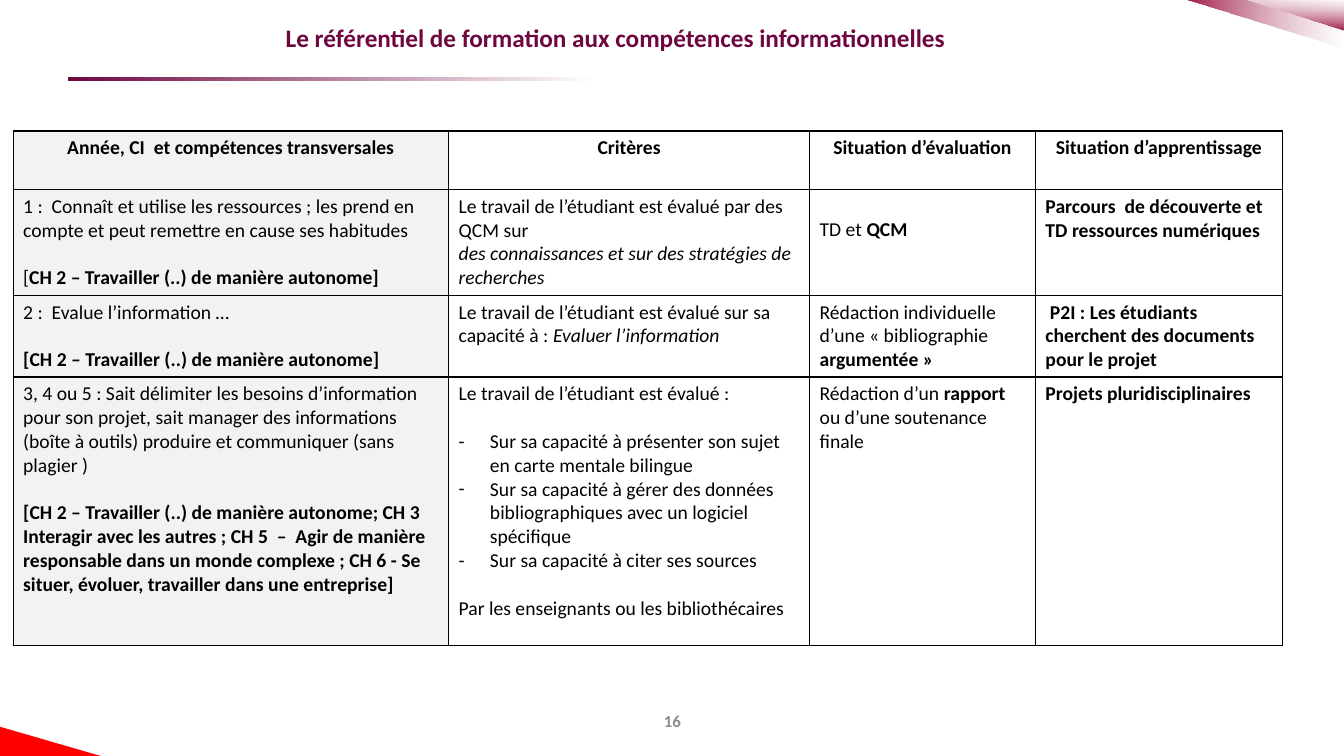
from pptx import Presentation
from pptx.dml.color import RGBColor
from pptx.enum import shapes, text
from pptx.oxml import ns, xmlchemy as xml
from pptx.util import Inches, Pt

PLUM = RGBColor(0x6E, 0x07, 0x40)
ROSE = RGBColor(0x9D, 0x17, 0x47)
RED = RGBColor(0xFF, 0x00, 0x00)
GRAY = RGBColor(0x8C, 0x8C, 0x8C)
PALE = RGBColor(0xF2, 0xF2, 0xF2)
WHITE = RGBColor(0xFF, 0xFF, 0xFF)
BLACK = RGBColor(0x00, 0x00, 0x00)

COLS = [4.32, 3.58, 2.24, 2.45]
ROWS = [0.58, 1.05, 0.81, 2.66]
GAP = 17  # points, one line of table text

# Marks: *bold*, _italic_; a paragraph starts with "+" for a gap, "- " for a bullet
HEADS = ["Année, CI  et compétences transversales", "Critères",
         "Situation d’évaluation", "Situation d’apprentissage"]
BODY = [
    [["1 :  Connaît et utilise les ressources ; les prend en compte et peut "
      "remettre en cause ses habitudes",
      "+[*CH 2 – Travailler (..) de manière autonome]*"],
     ["Le travail de l’étudiant est évalué par des QCM sur",
      "_des connaissances et sur des stratégies de recherches_"],
     ["+TD et *QCM*"],
     ["*Parcours  de découverte et TD ressources numériques*"]],
    [["2 :  Evalue l’information …",
      "+*[CH 2 – Travailler (..) de manière autonome]*"],
     ["Le travail de l’étudiant est évalué sur sa capacité à : "
      "_Evaluer l’information_"],
     ["Rédaction individuelle d’une « bibliographie *argumentée »*"],
     ["* P2I : Les étudiants cherchent des documents pour le projet*"]],
    [["3, 4 ou 5 : Sait délimiter les besoins d’information pour son projet, "
      "sait manager des informations (boîte à outils) produire et "
      "communiquer (sans plagier )",
      "+*[CH 2 – Travailler (..) de manière autonome; CH 3 Interagir avec les "
      "autres ; CH 5  –  Agir de manière responsable dans un monde complexe ; "
      "CH 6 - Se situer, évoluer, travailler dans une entreprise]*"],
     ["Le travail de l’étudiant est évalué :",
      "+- Sur sa capacité à présenter son sujet en carte mentale bilingue",
      "- Sur sa capacité à gérer des données bibliographiques avec un "
      "logiciel spécifique",
      "- Sur sa capacité à citer ses sources",
      "+Par les enseignants ou les bibliothécaires"],
     ["Rédaction d’un *rapport* ou d’une soutenance finale"],
     ["*Projets pluridisciplinaires*"]],
]


def put(obj, **vals):
    for key, val in vals.items():
        setattr(obj, key, val)


def child(node, tag, **vals):
    sub = xml.OxmlElement(tag)
    for key, val in vals.items():
        sub.set(key, str(val))
    node.append(sub)
    return sub


class Page:
    font = "Calibri"

    def __init__(self, deck):
        self.slide = deck.slides.add_slide(deck.slide_layouts[5])
        self.shapes = self.slide.shapes

    def run(self, para, words, size, color, **form):
        run = para.add_run()
        run.text = words
        put(run.font, name=self.font, size=Pt(size), **form)
        run.font.color.rgb = color

    def line(self, frame, words, size, color):
        """Write one centred bold line in the middle of a text frame."""
        put(frame, word_wrap=True, auto_size=text.MSO_AUTO_SIZE.NONE,
            vertical_anchor=text.MSO_ANCHOR.MIDDLE)
        para = frame.paragraphs[0]
        para.alignment = text.PP_ALIGN.CENTER
        self.run(para, words, size, color, bold=True)
        return para

    def title(self, words, left, top, width, height):
        box = self.shapes.title
        put(box, left=Inches(left), top=Inches(top),
            width=Inches(width), height=Inches(height))
        put(box.text_frame, margin_left=Inches(0.1), margin_right=0,
            margin_top=0, margin_bottom=Inches(0.3))
        self.line(box.text_frame, words, 18, PLUM).line_spacing = 0.9

    def label(self, words, *place):
        box = self.shapes.add_textbox(*map(Inches, place))
        self.line(box.text_frame, words, 12, GRAY)

    def paint(self, shape, color, turn=None, alpha=100):
        """Fill plainly, or with a fade to white when a turn is given."""
        shape.shadow.inherit = False
        shape.line.fill.background()
        if turn is None:
            shape.fill.solid()
            shape.fill.fore_color.rgb = color
            return
        shape.fill.gradient()
        shape.fill.gradient_angle = turn
        for stop, tint in zip(shape.fill.gradient_stops, (color, WHITE)):
            stop.color.rgb = tint
        last = list(shape.element.spPr.iter(ns.qn("a:srgbClr")))[-1]
        child(last, "a:alpha", val=alpha * 1000)

    def wedge(self, points, *look):
        pts = [(Inches(x), Inches(y)) for x, y in points]
        form = self.shapes.build_freeform(*pts[0])
        form.add_line_segments(pts[1:], close=True)
        self.paint(form.convert_to_shape(), *look)

    def bar(self, place, *look):
        kind = shapes.MSO_SHAPE.RECTANGLE
        self.paint(self.shapes.add_shape(kind, *map(Inches, place)), *look)

    def para(self, para, words):
        """Write a marked-up body paragraph."""
        if words.startswith("- "):
            words = words[2:]
            prop = para._p.get_or_add_pPr()
            prop.set("marL", str(Inches(0.31)))
            prop.set("indent", str(-Inches(0.31)))
            child(prop, "a:buFont", typeface=self.font)
            child(prop, "a:buChar", char="-")
        for i, part in enumerate(words.split("*")):
            for j, bit in enumerate(part.split("_")):
                if bit:
                    self.run(para, bit, 14, BLACK,
                             bold=i % 2 == 1, italic=j % 2 == 1)

    def cell(self, cell, paras, tint):
        prop = cell._tc.get_or_add_tcPr()
        for side in "LRTB":
            edge = child(prop, "a:ln" + side, w=Pt(1))
            child(child(edge, "a:solidFill"), "a:srgbClr", val=BLACK)
        cell.fill.solid()
        cell.fill.fore_color.rgb = tint
        for i, words in enumerate(paras):
            frame = cell.text_frame
            para = frame.add_paragraph() if i else frame.paragraphs[0]
            self.para(para, words.lstrip("+"))
            if words.startswith("+"):
                if i:
                    para.space_before = Pt(GAP)
                else:
                    cell.margin_top = Inches(0.05) + Pt(GAP)

    def table(self, left, top):
        grid = self.shapes.add_table(
            len(ROWS), len(COLS), Inches(left), Inches(top),
            Inches(sum(COLS)), Inches(sum(ROWS))).table
        put(grid, first_row=False, horz_banding=False)
        for col, width in zip(grid.columns, COLS):
            col.width = Inches(width)
        for row, height in zip(grid.rows, ROWS):
            row.height = Inches(height)
        for r, row in enumerate([[[f"*{head}*"] for head in HEADS]] + BODY):
            for c, paras in enumerate(row):
                self.cell(grid.cell(r, c), paras, WHITE if c else PALE)
        for c in range(len(COLS)):
            para = grid.cell(0, c).text_frame.paragraphs[0]
            para.alignment = text.PP_ALIGN.CENTER


def main():
    deck = Presentation()
    put(deck, slide_width=Inches(13.33), slide_height=Inches(7.5))
    page = Page(deck)
    page.wedge([(0, 7.21), (1, 7.5), (0, 7.5)], RED)
    page.wedge([(13.33, 0.48), (11.75, 0), (13.33, 0)], ROSE, 352, 47)
    page.wedge([(13.33, 0.3), (12.34, 0), (13.33, 0)], ROSE, 90, 57)
    page.bar((0.67, 0.76, 5.25, 0.04), PLUM, 0)
    page.title("Le référentiel de formation aux compétences informationnelles",
               0.65, 0.15, 10.81, 0.78)
    page.label("16", 4.42, 6.95, 4.5, 0.4)
    page.table(0.13, 1.3)
    deck.save("out.pptx")


if __name__ == "__main__":
    main()
